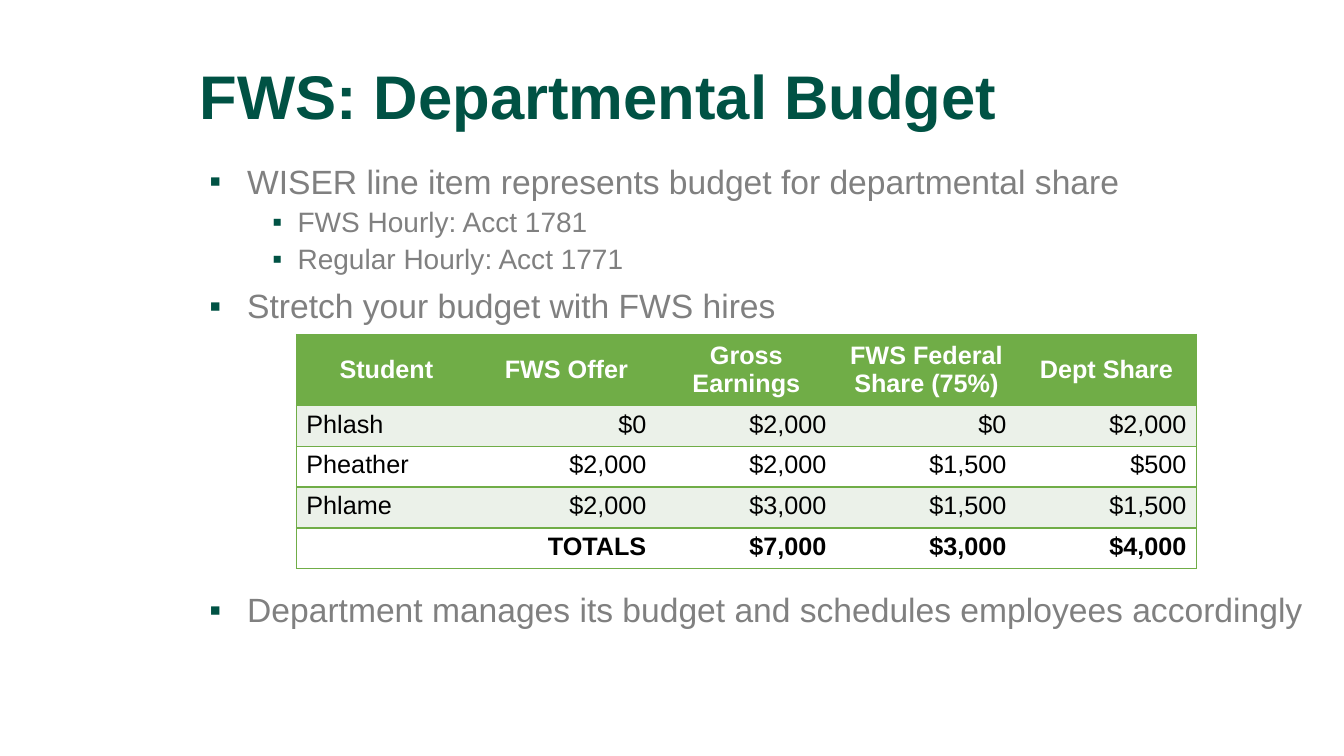
from lxml import etree
from pptx import Presentation
from pptx.dml.color import RGBColor
from pptx.enum import text
from pptx.oxml import ns
from pptx.util import Pt

HEADING = "FWS: Departmental Budget"
POINTS = [
    (0, "WISER line item represents budget for departmental share", 0),
    (1, "FWS Hourly: Acct 1781", 5),
    (1, "Regular Hourly: Acct 1771", 5),
    (0, "Stretch your budget with FWS hires", 10),
    (0, "Department manages its budget and schedules employees accordingly", 191),
]
BUDGET = [
    ("Student", "FWS Offer", "Gross Earnings", "FWS Federal Share (75%)", "Dept Share"),
    ("Phlash", "$0", "$2,000", "$0", "$2,000"),
    ("Pheather", "$2,000", "$2,000", "$1,500", "$500"),
    ("Phlame", "$2,000", "$3,000", "$1,500", "$1,500"),
    ("", "TOTALS", "$7,000", "$3,000", "$4,000"),
]
LEVELS = [(24, 27, 27), (20, 63, 18)]
DARK_GREEN, GREEN, PALE = "005244", "70AD47", "EBF1E9"
WHITE, BLACK, GREY = "FFFFFF", "000000", "808080"
COLUMN_WIDTH, HEADER_HEIGHT, ROW_HEIGHT = 128.6, 48.6, 29.25


def rgb(value):
    return RGBColor.from_string(value)


def style(paragraph, size, color, bold=False):
    font = paragraph.font
    font.name, font.size, font.bold = "Arial", Pt(size), bold
    font.color.rgb = rgb(color)


def add_element(parent, tag, **attributes):
    return etree.SubElement(parent, ns.qn(tag), attributes)


def add_bullet(paragraph, left, hanging):
    properties = paragraph._p.get_or_add_pPr()
    properties.set("marL", str(Pt(left)))
    properties.set("indent", str(-Pt(hanging)))
    add_element(add_element(properties, "a:buClr"), "a:srgbClr", val=DARK_GREEN)
    add_element(properties, "a:buFont", typeface="Arial")
    add_element(properties, "a:buChar", char="▪")


def add_borders(cell, visible):
    properties = cell._tc.get_or_add_tcPr()
    for side in "LRTB":
        line = add_element(properties, f"a:ln{side}", w=str(Pt(1)))
        if side in visible:
            add_element(add_element(line, "a:solidFill"), "a:srgbClr", val=GREEN)
        else:
            add_element(line, "a:noFill")


deck = Presentation()
deck.slide_width, deck.slide_height = Pt(960), Pt(540)
slide = deck.slides.add_slide(deck.slide_layouts[5])

title = slide.shapes.title
title.left, title.top, title.width, title.height = Pt(135.4), Pt(-5.8), Pt(828), Pt(104.4)
title.text_frame.text = HEADING
title.text_frame.vertical_anchor = text.MSO_ANCHOR.BOTTOM
title.text_frame.auto_size = text.MSO_AUTO_SIZE.NONE
heading = title.text_frame.paragraphs[0]
heading.alignment = text.PP_ALIGN.LEFT
heading.line_spacing = 0.9
style(heading, 44, DARK_GREEN, True)

body = slide.shapes.add_textbox(Pt(142.5), Pt(114.5), Pt(828), Pt(374)).text_frame
body.word_wrap = True
for index, (level, wording, gap) in enumerate(POINTS):
    point = body.add_paragraph() if index else body.paragraphs[0]
    size, left, hanging = LEVELS[level]
    point.text, point.level = wording, level
    point.line_spacing, point.space_before = 0.9, Pt(gap)
    add_bullet(point, left, hanging)
    style(point, size, GREY)

rows, columns = len(BUDGET), len(BUDGET[0])
budget = slide.shapes.add_table(
    rows, columns, Pt(211.7), Pt(239), Pt(columns * COLUMN_WIDTH),
    Pt(HEADER_HEIGHT + (rows - 1) * ROW_HEIGHT)).table
for column in budget.columns:
    column.width = Pt(COLUMN_WIDTH)
for r, entries in enumerate(BUDGET):
    header, totals = r == 0, r == rows - 1
    budget.rows[r].height = Pt(HEADER_HEIGHT if header else ROW_HEIGHT)
    for c, entry in enumerate(entries):
        cell = budget.cell(r, c)
        cell.text = entry
        add_borders(cell, "TB" + "L" * (c == 0) + "R" * (c == columns - 1))
        cell.fill.solid()
        cell.fill.fore_color.rgb = rgb(GREEN if header else PALE if r % 2 else WHITE)
        label = cell.text_frame.paragraphs[0]
        if header:
            cell.vertical_anchor = text.MSO_ANCHOR.MIDDLE
            label.alignment = text.PP_ALIGN.CENTER
        else:
            label.alignment = text.PP_ALIGN.RIGHT if c else text.PP_ALIGN.LEFT
        style(label, 18, WHITE if header else BLACK, header or totals)

deck.save("out.pptx")
